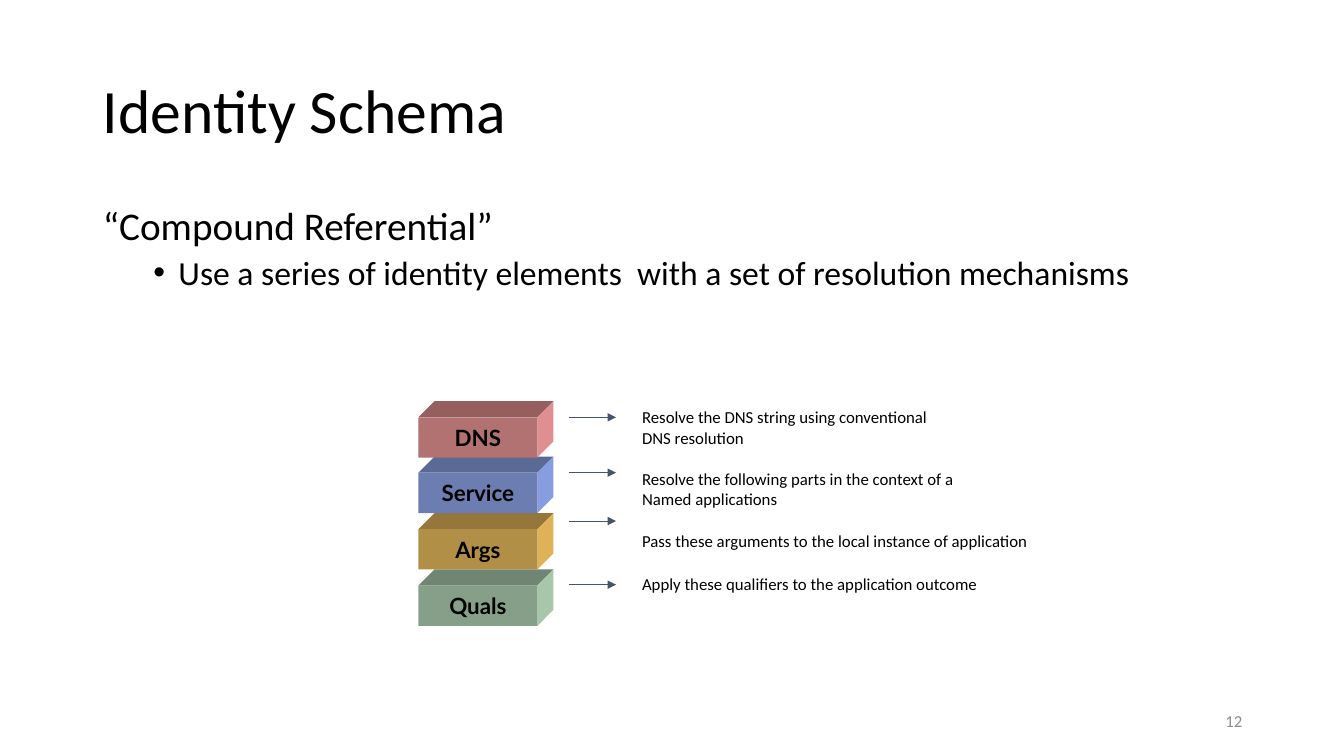
from dataclasses import dataclass

from lxml import etree
from pptx import Presentation
from pptx.dml.color import RGBColor
from pptx.enum.shapes import MSO_CONNECTOR, MSO_SHAPE
from pptx.enum.text import MSO_ANCHOR, MSO_AUTO_SIZE, PP_ALIGN
from pptx.oxml.ns import qn
from pptx.util import Pt

PX = 9144
RECT = MSO_SHAPE.RECTANGLE
STRAIGHT = MSO_CONNECTOR.STRAIGHT
MIDDLE = MSO_ANCHOR.MIDDLE
TOP = MSO_ANCHOR.TOP
LEFT = PP_ALIGN.LEFT
CENTER = PP_ALIGN.CENTER
RIGHT = PP_ALIGN.RIGHT
NO_FIT = MSO_AUTO_SIZE.NONE

BLACK = RGBColor(0x00, 0x00, 0x00)
GREY = RGBColor(0x8C, 0x8C, 0x8C)
SLATE = RGBColor(0x44, 0x54, 0x6A)
ROSE = RGBColor(0xB2, 0x72, 0x72)
ROSE_DARK = RGBColor(0x95, 0x5F, 0x5F)
ROSE_LIGHT = RGBColor(0xDF, 0x8F, 0x8F)
BLUE = RGBColor(0x6C, 0x7D, 0xB2)
BLUE_DARK = RGBColor(0x5B, 0x69, 0x95)
BLUE_LIGHT = RGBColor(0x88, 0x9D, 0xDF)
AMBER = RGBColor(0xB2, 0x8F, 0x47)
AMBER_DARK = RGBColor(0x95, 0x77, 0x3C)
AMBER_LIGHT = RGBColor(0xDF, 0xB2, 0x59)
GREEN = RGBColor(0x86, 0x9F, 0x88)
GREEN_DARK = RGBColor(0x70, 0x85, 0x72)
GREEN_LIGHT = RGBColor(0xA7, 0xC6, 0xAA)

BLOCK_X, BLOCK_W, BLOCK_H, DEPTH = 415, 118, 40, 16
ARROW_X1, ARROW_X2 = 564, 611
NOTE_X = 627


@dataclass(frozen=True)
class Element:
    name: str
    y: int
    front: RGBColor
    top: RGBColor
    side: RGBColor
    arrow_y: int
    note_y: int
    note_w: int
    note: tuple[str, ...]


ELEMENTS = (
    Element("DNS", 414, ROSE, ROSE_DARK, ROSE_LIGHT, 414, 399, 306,
            ("Resolve the DNS string using conventional", "DNS resolution")),
    Element("Service", 469, BLUE, BLUE_DARK, BLUE_LIGHT, 469, 460, 333,
            ("Resolve the following parts in the context of a", "Named applications")),
    Element("Args", 525, AMBER, AMBER_DARK, AMBER_LIGHT, 517, 522, 407,
            ("Pass these arguments to the local instance of application",)),
    Element("Quals", 581, GREEN, GREEN_DARK, GREEN_LIGHT, 580, 564, 356,
            ("Apply these qualifiers to the application outcome",)),
)


def place(s, x: int, y: int, w: int, h: int) -> None:
    s.left, s.top, s.width, s.height = x * PX, y * PX, w * PX, h * PX


def add_run(p, text: str, size: int, color: RGBColor = BLACK,
            font: str = "Calibri", bold: bool = False) -> None:
    r = p.add_run()
    r.text = text
    r.font.name = font
    r.font.size = Pt(size)
    r.font.bold = bold
    r.font.color.rgb = color


def paint(s, color: RGBColor) -> None:
    s.shadow.inherit = False
    s.fill.solid()
    s.fill.fore_color.rgb = color
    s.line.fill.background()


def add_face(sp, points: list[tuple[int, int]], color: RGBColor) -> None:
    builder = sp.build_freeform(*points[0], scale=PX)
    builder.add_line_segments(points[1:], close=True)
    paint(builder.convert_to_shape(), color)


def add_block(sp, e: Element) -> None:
    x1, x2, y1, y2 = BLOCK_X, BLOCK_X + BLOCK_W, e.y, e.y + BLOCK_H
    back = (x2 + DEPTH, y1 - DEPTH)
    add_face(sp, [(x1, y1), (x1 + DEPTH, y1 - DEPTH), back, (x2, y1)], e.top)
    add_face(sp, [(x2, y1), back, (x2 + DEPTH, y2 - DEPTH), (x2, y2)], e.side)
    s = sp.add_shape(RECT, x1 * PX, y1 * PX, BLOCK_W * PX, BLOCK_H * PX)
    paint(s, e.front)
    tf = s.text_frame
    tf.word_wrap = False
    tf.vertical_anchor = MIDDLE
    p = tf.paragraphs[0]
    p.alignment = CENTER
    add_run(p, e.name, 16, font="Lato", bold=True)


def add_arrow(sp, y: int) -> None:
    c = sp.add_connector(STRAIGHT, ARROW_X1 * PX, y * PX, ARROW_X2 * PX, y * PX)
    c.line.color.rgb = SLATE
    c.line.width = Pt(0.75)
    spPr = c.element.spPr
    etree.SubElement(spPr.find(qn("a:ln")), qn("a:tailEnd"), type="triangle")
    etree.SubElement(spPr, qn("a:effectLst"))


def add_note(sp, e: Element) -> None:
    h = 10 + 20 * len(e.note)
    s = sp.add_textbox(NOTE_X * PX, e.note_y * PX, e.note_w * PX, h * PX)
    tf = s.text_frame
    tf.word_wrap = False
    for i, line in enumerate(e.note):
        p = tf.add_paragraph() if i else tf.paragraphs[0]
        add_run(p, line, 12)


def add_title(s) -> None:
    place(s, 92, 40, 1150, 145)
    tf = s.text_frame
    tf.auto_size = NO_FIT
    tf.vertical_anchor = MIDDLE
    p = tf.paragraphs[0]
    p.alignment = LEFT
    p.line_spacing = 0.9
    add_run(p, "Identity Schema", 44)


def add_body(s) -> None:
    place(s, 92, 200, 1150, 476)
    tf = s.text_frame
    tf.auto_size = NO_FIT
    tf.vertical_anchor = TOP
    items = (
        ("“Compound Referential”", 28, 10, 0, 0, ""),
        ("Use a series of identity elements  with a set of resolution mechanisms",
         24, 5, 75, -25, "•"),
    )
    for i, (text, size, before, margin, indent, bullet) in enumerate(items):
        p = tf.add_paragraph() if i else tf.paragraphs[0]
        p.level = i
        p.line_spacing = 0.9
        p.space_before = Pt(before)
        pPr = p._p.get_or_add_pPr()
        pPr.set("marL", str(margin * PX))
        pPr.set("indent", str(indent * PX))
        if bullet:
            etree.SubElement(pPr, qn("a:buFont"), typeface="Arial")
            etree.SubElement(pPr, qn("a:buChar"), char=bullet)
        else:
            etree.SubElement(pPr, qn("a:buNone"))
        add_run(p, text, size)


def add_page_number(sp) -> None:
    s = sp.add_textbox(942 * PX, 695 * PX, 300 * PX, 40 * PX)
    tf = s.text_frame
    tf.word_wrap = True
    tf.vertical_anchor = MIDDLE
    p = tf.paragraphs[0]
    p.alignment = RIGHT
    add_run(p, "12", 12, GREY)


def main() -> None:
    prs = Presentation()
    prs.slide_width, prs.slide_height = 1333 * PX, 750 * PX
    slide = prs.slides.add_slide(prs.slide_layouts[1])
    sp = slide.shapes
    add_title(sp.title)
    add_body(slide.placeholders[1])
    for e in reversed(ELEMENTS):
        add_block(sp, e)
    for e in ELEMENTS:
        add_note(sp, e)
        add_arrow(sp, e.arrow_y)
    add_page_number(sp)
    prs.save("out.pptx")


if __name__ == "__main__":
    main()
